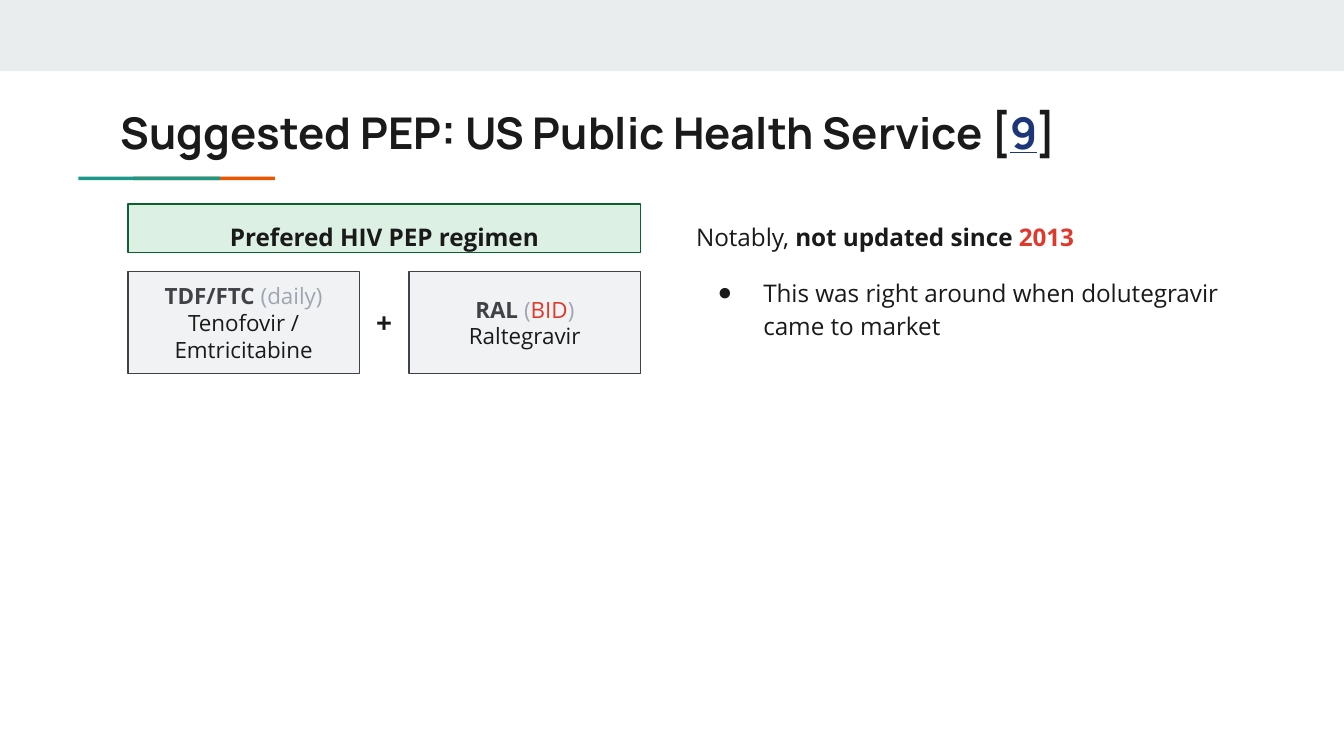
from pptx import Presentation
from pptx import util as u
from pptx.dml import color
from pptx.enum import shapes, text
from pptx.oxml import parse_xml
from pptx.oxml.ns import nsdecls

Pt = u.Pt
INK, SLATE, GREY, RED = "1A1A1A", "404247", "9FA6B2", "DF382C"
TOP, MIDDLE = text.MSO_ANCHOR.TOP, text.MSO_ANCHOR.MIDDLE
LEFT, CENTER = text.PP_ALIGN.LEFT, text.PP_ALIGN.CENTER


def rgb(value):
    return color.RGBColor.from_string(value)


class Deck:
    font = "Open Sans"
    heading_font = "Manrope"
    inset = Pt(7.2)

    def __init__(self, width, height):
        self.prs = Presentation()
        self.prs.slide_width, self.prs.slide_height = Pt(width), Pt(height)
        self.s = self.prs.slides.add_slide(self.prs.slide_layouts[1])

    def frame(self, sp, anchor):
        tf = sp.text_frame
        tf.word_wrap = True
        tf.auto_size = text.MSO_AUTO_SIZE.NONE
        tf.vertical_anchor = anchor
        tf.margin_left = tf.margin_right = self.inset
        tf.margin_top = tf.margin_bottom = self.inset
        return tf

    def paragraph(self, tf, runs, size, align=LEFT, spacing=1, before=0,
                  after=0, font=None, bullet=False):
        p = tf.paragraphs[0]
        if p.runs:
            p = tf.add_paragraph()
        p.alignment, p.line_spacing = align, spacing
        p.space_before, p.space_after = Pt(before), Pt(after)
        pPr = p._p.get_or_add_pPr()
        pPr.set("marL", str(Pt(36) if bullet else 0))
        pPr.set("indent", str(Pt(-24.5) if bullet else 0))
        if bullet:
            pPr.append(parse_xml(
                f'<a:buClr {nsdecls("a")}><a:srgbClr val="{INK}"/></a:buClr>'))
            pPr.append(parse_xml(f'<a:buChar {nsdecls("a")} char="●"/>'))
        else:
            pPr.append(parse_xml(f'<a:buNone {nsdecls("a")}/>'))
        for words, hue, bold, *underline in runs:
            r = p.add_run()
            r.text = words
            r.font.name, r.font.size = font or self.font, Pt(size)
            r.font.bold, r.font.underline = bold, bool(underline)
            r.font.color.rgb = rgb(hue)

    def box(self, x, y, w, h, fill, line=None, anchor=MIDDLE):
        sp = self.s.shapes.add_shape(
            shapes.MSO_SHAPE.RECTANGLE, Pt(x), Pt(y), Pt(w), Pt(h))
        sp.shadow.inherit = False
        sp.fill.solid()
        sp.fill.fore_color.rgb = rgb(fill)
        if line:
            sp.line.color.rgb = rgb(line)
            sp.line.width = Pt(0.75)
        else:
            sp.line.fill.background()
        return self.frame(sp, anchor)

    def label(self, x, y, w, h):
        sp = self.s.shapes.add_textbox(Pt(x), Pt(y), Pt(w), Pt(h))
        return self.frame(sp, MIDDLE)

    def placeholder(self, index, x, y, w, h):
        sp = self.s.placeholders[index]
        sp.left, sp.top, sp.width, sp.height = Pt(x), Pt(y), Pt(w), Pt(h)
        return self.frame(sp, TOP)

    def drug(self, x, y, w, h, heading, name):
        tf = self.box(x, y, w, h, "F1F2F3", SLATE)
        self.paragraph(tf, heading, 12, CENTER)
        self.paragraph(tf, [(name, INK, False)], 12, CENTER)


def main():
    deck = Deck(720, 405)
    deck.box(0, 0, 720, 38.2, "E9EDEE")
    for x, fill in ((71.3, "EB5600"), (42, "1A9988")):
        deck.box(x, 94.7, 76, 1.8, fill)

    title = deck.placeholder(0, 57.5, 49.7, 605.5, 42.5)
    deck.paragraph(title, [
        ("Suggested PEP: US Public Health Service [", INK, True),
        ("9", "1C3678", True, True),
        ("]", INK, True)], 23.4, font=deck.heading_font)

    left, top, width = 68.6, 109.4, 274.5
    drug_top, drug_w, drug_h = 145.4, 123.9, 54.8
    gap = width - 2 * drug_w
    regimen = deck.box(left, top, width, 25.9, "DCF1E4", "0C622E", TOP)
    deck.paragraph(regimen, [("Prefered HIV PEP regimen", INK, True)],
                   13, CENTER, 1.15, after=12)
    deck.drug(left, drug_top, drug_w, drug_h,
              [("TDF/FTC ", SLATE, True), ("(daily)", GREY, False)],
              "Tenofovir / Emtricitabine")
    deck.drug(left + drug_w + gap, drug_top, drug_w, drug_h,
              [("RAL ", SLATE, True), ("(", GREY, False),
               ("BID", RED, False), (")", GREY, False)],
              "Raltegravir")
    plus = deck.label(left + drug_w, drug_top, gap, drug_h)
    deck.paragraph(plus, [("+", INK, True)], 15, CENTER)

    notes = deck.placeholder(1, 365.7, top, 297.3, 177.8)
    deck.paragraph(notes, [
        ("Notably, ", INK, False), ("not updated since ", INK, True),
        ("2013", RED, True)], 13, spacing=1.15)
    deck.paragraph(notes, [
        ("This was right around when dolutegravir came to market", INK, False)],
        13, spacing=1.15, before=12, bullet=True)
    deck.prs.save("out.pptx")


if __name__ == "__main__":
    main()
